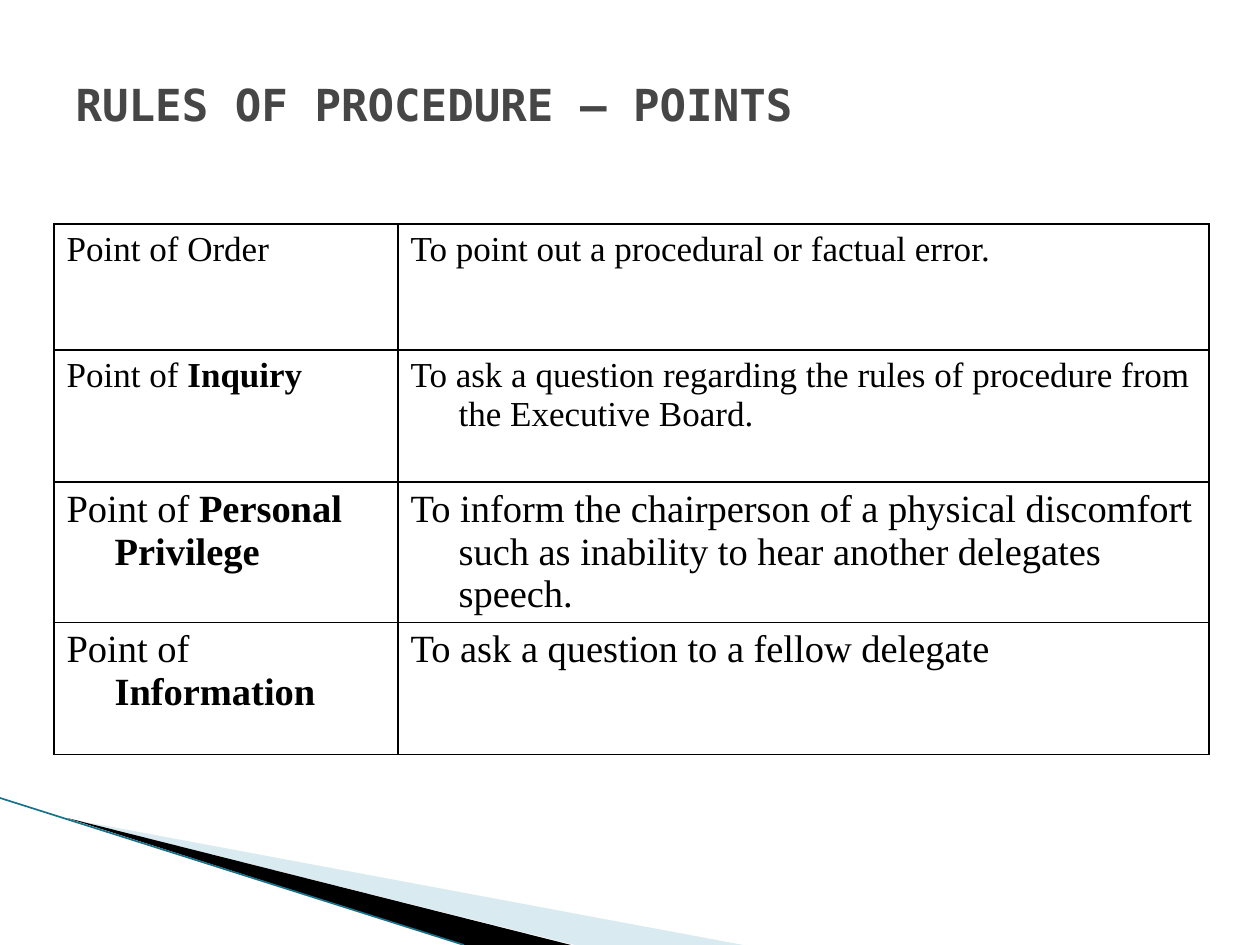
"""Build the slide on the points in the rules of procedure."""
from dataclasses import dataclass

from lxml import etree
from pptx import Presentation
from pptx import util as u
from pptx.dml.color import RGBColor
from pptx.enum import shapes, text
from pptx.oxml import parse_xml
from pptx.oxml.ns import nsdecls, qn


@dataclass(frozen=True)
class Theme:
    title_font: str = "DejaVu Sans Mono"
    body_font: str = "Times New Roman"
    title_color: str = "464646"
    ink: str = "000000"
    pale: str = "A0CBDC"
    teal: str = "17728A"
    title_size: float = 25.2
    small: int = 20
    large: int = 22
    border: int = 1


theme = Theme()
SCALE = u.Inches(1) / 126


def px(length):
    return u.Emu(round(length * SCALE))


def add_run(paragraph, words, font_name, size, color, bold):
    run = paragraph.add_run()
    run.text = words
    run.font.name = font_name
    run.font.size = u.Pt(size)
    run.font.color.rgb = RGBColor.from_string(color)
    run.font.bold = bold


presentation = Presentation()
presentation.slide_width, presentation.slide_height = px(1260), px(945)
slide = presentation.slides.add_slide(presentation.slide_layouts[5])

wedges = [
    (theme.pale, 40, [(69, 819), (743, 945), (575, 945)]),
    (theme.ink, 100, [(67, 818), (571, 945), (464, 945)]),
]
for color, opacity, points in wedges:
    builder = slide.shapes.build_freeform(*points[0], scale=SCALE)
    builder.add_line_segments(points[1:], close=True)
    wedge = builder.convert_to_shape()
    wedge.shadow.inherit = False
    wedge.fill.solid()
    wedge.fill.fore_color.rgb = RGBColor.from_string(color)
    wedge.line.fill.background()
    if opacity < 100:
        fill_color = wedge.fill._xPr.find(qn("a:solidFill"))[0]
        etree.SubElement(fill_color, qn("a:alpha")).set("val", str(opacity * 1000))

edge = slide.shapes.add_connector(
    shapes.MSO_CONNECTOR.STRAIGHT, px(0), px(798), px(464), px(945))
edge.line.color.rgb = RGBColor.from_string(theme.teal)
edge.line.width = u.Pt(0.95)
etree.SubElement(edge._element.spPr, qn("a:effectLst"))

title = slide.shapes.title
title.left, title.top, title.width, title.height = px(63), px(72), px(1134), px(63)
title.text_frame.auto_size = text.MSO_AUTO_SIZE.NONE
title.text_frame.vertical_anchor = text.MSO_ANCHOR.MIDDLE
paragraph = title.text_frame.paragraphs[0]
paragraph.alignment = text.PP_ALIGN.LEFT
add_run(paragraph, "RULES OF PROCEDURE – POINTS", theme.title_font,
        theme.title_size, theme.title_color, True)

column_widths = [344, 811]
row_heights = [126, 132, 132, 132]
rows = [
    (theme.small, [("Point of Order", False)],
     "To point out a procedural or factual error."),
    (theme.small, [("Point of ", False), ("Inquiry", True)],
     "To ask a question regarding the rules of procedure from the Executive Board."),
    (theme.large, [("Point of ", False), ("Personal Privilege", True)],
     "To inform the chairperson of a physical discomfort such as inability "
     "to hear another delegates speech."),
    (theme.large, [("Point of ", False), ("Information", True)],
     "To ask a question to a fellow delegate"),
]

table = slide.shapes.add_table(
    len(rows), len(column_widths), px(54), px(224),
    px(sum(column_widths)), px(sum(row_heights))).table
table.first_row = table.horz_banding = False
for column, width in zip(table.columns, column_widths):
    column.width = px(width)

for row, height, (size, point, purpose) in zip(table.rows, row_heights, rows):
    row.height = px(height)
    for cell, runs in zip(row.cells, [point, [(purpose, False)]]):
        cell.fill.background()
        properties = cell._tc.get_or_add_tcPr()
        for index, side in enumerate(["lnL", "lnR", "lnT", "lnB"]):
            properties.insert(index, parse_xml(
                f'<a:{side} {nsdecls("a")} w="{u.Pt(theme.border)}"><a:solidFill>'
                f'<a:srgbClr val="{theme.ink}"/></a:solidFill></a:{side}>'))
        paragraph = cell.text_frame.paragraphs[0]
        indent = paragraph._p.get_or_add_pPr()
        indent.set("marL", str(px(48)))
        indent.set("indent", str(-px(48)))
        for words, bold in runs:
            add_run(paragraph, words, theme.body_font, size, theme.ink, bold)

presentation.save("out.pptx")
